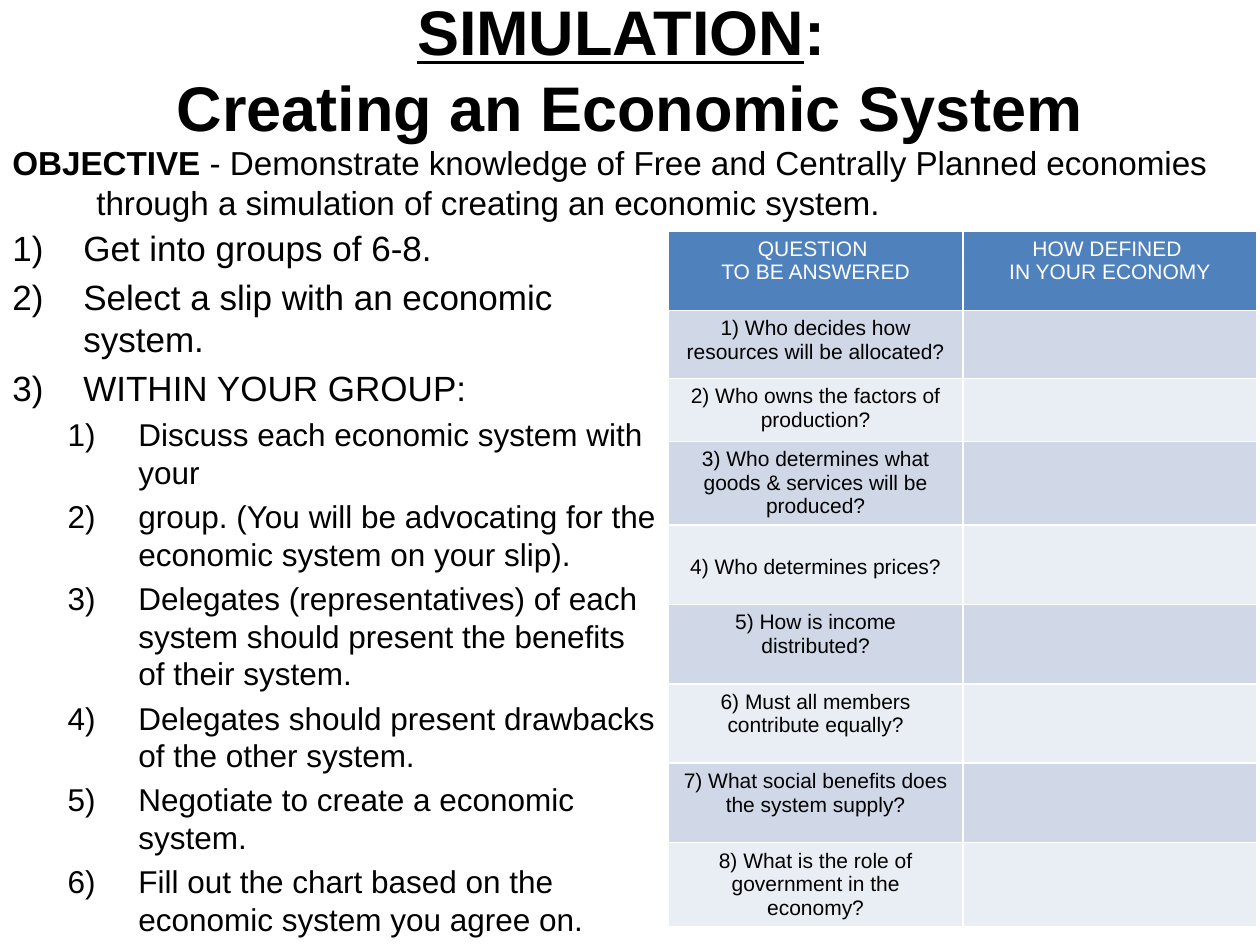
from lxml import etree
from pptx import Presentation
from pptx.dml.color import RGBColor
from pptx.enum.text import MSO_ANCHOR, PP_ALIGN
from pptx.oxml.ns import qn
from pptx.util import Pt

CENTER, MIDDLE, TOP = PP_ALIGN.CENTER, MSO_ANCHOR.MIDDLE, MSO_ANCHOR.TOP
BLACK = RGBColor(0x00, 0x00, 0x00)
WHITE = RGBColor(0xFF, 0xFF, 0xFF)
HEADER_BLUE = RGBColor(0x4F, 0x81, 0xBD)
BANDS = [RGBColor(0xD0, 0xD8, 0xE8), RGBColor(0xE9, 0xED, 0xF4)]
FONT = "Arial"

OBJECTIVE = (" - Demonstrate knowledge of Free and Centrally Planned economies "
             "through a simulation of creating an economic system.")
STEPS = [  # (level, text)
    (0, "Get into groups of 6-8."),
    (0, "Select a slip with an economic system."),
    (0, "WITHIN YOUR GROUP:"),
    (1, "Discuss each economic system with your"),
    (1, "group. (You will be advocating for the economic system on your slip)."),
    (1, "Delegates (representatives) of each system should present the benefits "
        "of their system."),
    (1, "Delegates should present drawbacks of the other system."),
    (1, "Negotiate to create a economic system."),
    (1, "Fill out the chart based on the economic system you agree on."),
]
STEP_STYLES = [  # size, left margin, space before
    (20, 40.5, 4),
    (18, 72, 3.6),
]
HEADERS = [("QUESTION ", "TO BE ANSWERED"), ("HOW DEFINED ", "IN YOUR ECONOMY")]
QUESTIONS = [  # (row height, text, anchor)
    (38.9, "1) Who decides how resources will be allocated?", TOP),
    (36, "2) Who owns the factors of production?", TOP),
    (45.36, "3) Who determines what goods & services will be produced?", TOP),
    (45.36, "4) Who determines prices?", MIDDLE),
    (45.36, "5) How is income distributed?", TOP),
    (45.36, "6) Must all members contribute equally?", TOP),
    (45.36, "7) What social benefits does the system supply?", TOP),
    (45.36, "8) What is the role of government in the economy?", TOP),
]
HEADER_HEIGHT = 45.36
COLUMN_WIDTH = 168.2


def add_box(s, x, y, w, h, anchor=TOP):
    tf = s.shapes.add_textbox(Pt(x), Pt(y), Pt(w), Pt(h)).text_frame
    tf.word_wrap = True
    tf.vertical_anchor = anchor
    return tf


def add_run(p, text, size, color=BLACK, bold=False, underline=False):
    r = p.add_run()
    r.text = text
    r.font.name, r.font.size, r.font.bold = FONT, Pt(size), bold
    r.font.underline = underline
    r.font.color.rgb = color


def set_indent(p, left, hanging):
    pPr = p._p.get_or_add_pPr()
    pPr.set("marL", str(Pt(left)))
    pPr.set("indent", str(-Pt(hanging)))
    return pPr


def style_cell(cell, fill, anchor=TOP):
    """Give the cell thin white borders, a solid fill, an anchor and a tight base."""
    tcPr = cell._tc.get_or_add_tcPr()
    for side in ("a:lnL", "a:lnR", "a:lnT", "a:lnB"):
        ln = etree.SubElement(tcPr, qn(side), w=str(Pt(1)))
        solid = etree.SubElement(ln, qn("a:solidFill"))
        etree.SubElement(solid, qn("a:srgbClr"), val=str(WHITE))
    cell.fill.solid()
    cell.fill.fore_color.rgb = fill
    cell.vertical_anchor = anchor
    cell.margin_bottom = Pt(1)


def write_lines(cell, lines, color):
    tf = cell.text_frame
    for i, line in enumerate(lines):
        p = tf.add_paragraph() if i else tf.paragraphs[0]
        p.alignment = CENTER
        add_run(p, line, 12, color)


def add_title(s):
    p = add_box(s, 0, 0, 720, 78, MIDDLE).paragraphs[0]
    p.alignment = CENTER
    add_run(p, "SIMULATION", 36, bold=True, underline=True)
    add_run(p, ": ", 36, bold=True)
    p.add_line_break()
    add_run(p, "Creating an Economic System", 36, bold=True)


def add_objective(s):
    p = add_box(s, 0, 78, 720, 54).paragraphs[0]
    set_indent(p, 48, 48)
    add_run(p, "OBJECTIVE", 19, bold=True)
    add_run(p, OBJECTIVE, 19)


def add_steps(s):
    tf = add_box(s, 0, 126, 384, 414)
    for i, (level, text) in enumerate(STEPS):
        size, left, before = STEP_STYLES[level]
        p = tf.add_paragraph() if i else tf.paragraphs[0]
        p.level = level
        pPr = set_indent(p, left, 40.5)
        etree.SubElement(pPr, qn("a:buAutoNum"), type="arabicParenR")
        if i:
            p.space_before = Pt(before)
        add_run(p, text, size)


def add_questions(s):
    heights = [HEADER_HEIGHT] + [height for height, _, _ in QUESTIONS]
    table = s.shapes.add_table(len(heights), len(HEADERS), Pt(382), Pt(132),
                               Pt(COLUMN_WIDTH * len(HEADERS)), Pt(sum(heights))).table
    for column in table.columns:
        column.width = Pt(COLUMN_WIDTH)
    for row, height in zip(table.rows, heights):
        row.height = Pt(height)
    for c, lines in enumerate(HEADERS):
        style_cell(table.cell(0, c), HEADER_BLUE)
        write_lines(table.cell(0, c), lines, WHITE)
    for i, (_, text, anchor) in enumerate(QUESTIONS):
        for c in range(len(HEADERS)):
            style_cell(table.cell(i + 1, c), BANDS[i % 2], anchor)
        write_lines(table.cell(i + 1, 0), [text], BLACK)


def main():
    prs = Presentation()
    prs.slide_width, prs.slide_height = Pt(720), Pt(540)
    s = prs.slides.add_slide(prs.slide_layouts[6])
    add_title(s)
    add_objective(s)
    add_questions(s)
    add_steps(s)
    prs.save("out.pptx")


if __name__ == "__main__":
    main()
